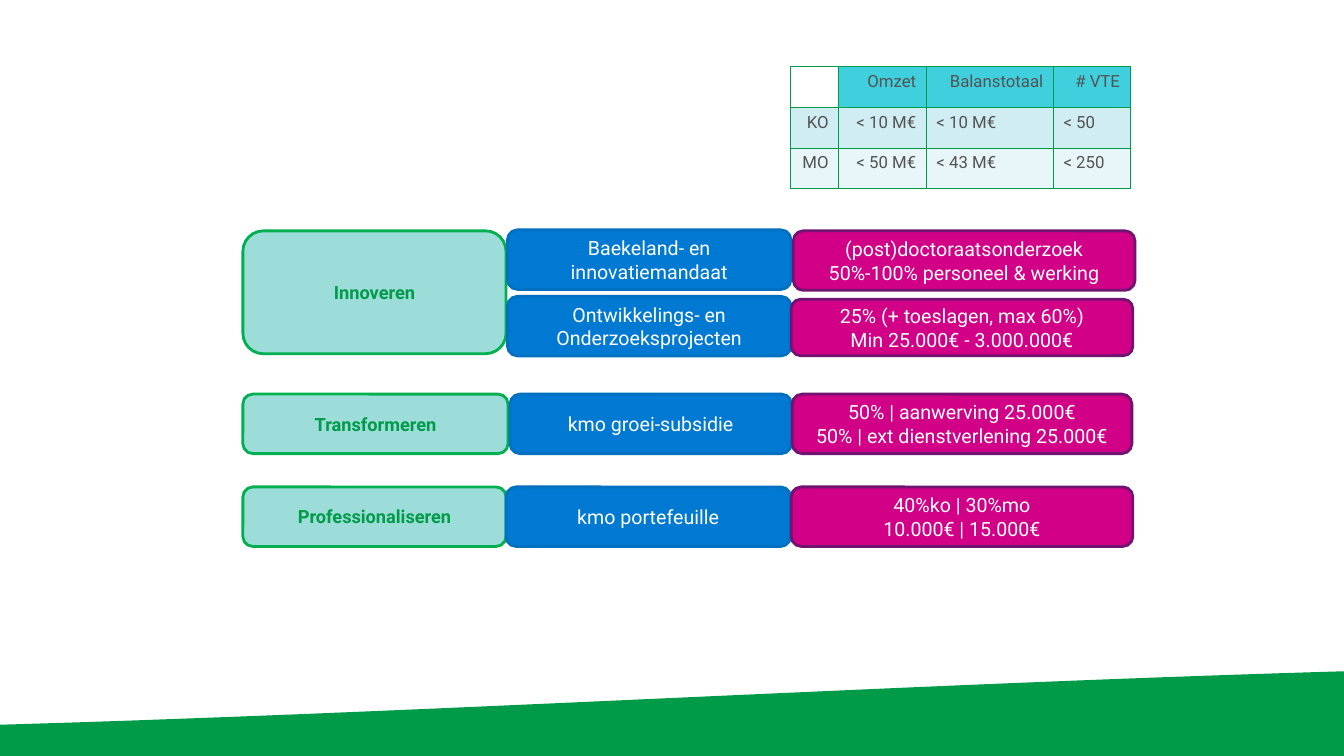
from lxml.etree import SubElement
from pptx import Presentation
from pptx.dml.color import RGBColor
from pptx.enum.shapes import MSO_SHAPE
from pptx.enum.text import MSO_ANCHOR, PP_ALIGN
from pptx.oxml.ns import qn
from pptx.util import Pt

# Content: each box is left, top, width, height and its lines of text
BOX_GROUPS = [
    {"fill": "9CDCD9", "line": "00B050", "text": "009B48", "size": 13, "bold": True, "boxes": [
        (173.5, 164.9, 188, 87.8, ["Innoveren"]),
        (173.5, 281.5, 189.4, 42.5, ["Transformeren"]),
        (173.5, 347.8, 188, 42.5, ["Professionaliseren"]),
    ]},
    {"fill": "0079D3", "line": "0070C0", "text": "FFFFFF", "size": 14, "bold": False, "boxes": [
        (362.5, 164.2, 202.5, 42.5, ["Baekeland- en innovatiemandaat"]),
        (362.5, 211.7, 202.5, 42.5, ["Ontwikkelings- en Onderzoeksprojecten"]),
        (364.3, 281.5, 201, 42.5, ["kmo groei-subsidie"]),
        (361.5, 347.8, 203.2, 42.5, ["kmo portefeuille"]),
    ]},
    {"fill": "D10086", "line": "711371", "text": "FFFFFF", "size": 14, "bold": False, "boxes": [
        (566.7, 164.9, 244, 42.5, ["(post)doctoraatsonderzoek", "50%-100% personeel & werking"]),
        (565.2, 213.8, 244, 40.3, ["25% (+ toeslagen, max 60%)", "Min 25.000€ - 3.000.000€"]),
        (565.9, 281.5, 242.6, 42.5, ["50% | aanwerving 25.000€", "50% | ext dienstverlening 25.000€"]),
        (565.2, 347.8, 244, 42.5, ["40%ko | 30%mo", "10.000€ | 15.000€"]),
    ]},
]
SIZE_LIMITS = [
    ["", "Omzet", "Balanstotaal", "# VTE"],
    ["KO", "< 10 M€", "< 10 M€", "< 50"],
    ["MO", "< 50 M€", "< 43 M€", "< 250"],
]
ROW_FILLS = ["3FCFDD", "CFEDF2", "E8F6F9"]
COLUMN_WIDTHS = [34.6, 62.6, 90.8, 54.8]
ROW_HEIGHT = 29.1
GREEN = "009B48"
FONT = "Roboto"
# Top edge of the footer band: two cubic curves
FOOTER_CURVES = [
    [(0, 517.7), (321.8, 508.3), (638.6, 488.9), (960, 479.5)],
]


def color(hex_text):
    return RGBColor.from_string(hex_text)


def style_paragraph(para, size, hex_text, align, bold=False):
    para.alignment = align
    for span in para.runs:
        span.font.name = FONT
        span.font.size = Pt(size)
        span.font.bold = bold
        span.font.color.rgb = color(hex_text)


def curve_point(curve, t):
    weights = [(1 - t) ** 3, 3 * t * (1 - t) ** 2, 3 * t ** 2 * (1 - t), t ** 3]
    return tuple(Pt(sum(w * point[axis] for w, point in zip(weights, curve))) for axis in (0, 1))


def add_footer(page):
    steps = 40
    edge = [curve_point(curve, i / steps) for curve in FOOTER_CURVES for i in range(steps + 1)]
    builder = page.shapes.build_freeform(*edge[0], scale=1.0)
    builder.add_line_segments(edge[1:] + [(Pt(960), Pt(540)), (0, Pt(540))], close=True)
    band = builder.convert_to_shape()
    band.shadow.inherit = False
    band.fill.solid()
    band.fill.fore_color.rgb = color(GREEN)
    band.line.fill.background()


def add_box(page, group, left, top, width, height, lines):
    box = page.shapes.add_shape(MSO_SHAPE.ROUNDED_RECTANGLE, Pt(left), Pt(top), Pt(width), Pt(height))
    box.shadow.inherit = False
    box.fill.solid()
    box.fill.fore_color.rgb = color(group["fill"])
    box.line.color.rgb = color(group["line"])
    box.line.width = Pt(2)
    frame = box.text_frame
    frame.word_wrap = True
    frame.vertical_anchor = MSO_ANCHOR.MIDDLE
    frame.text = "\n".join(lines)
    for para in frame.paragraphs:
        style_paragraph(para, group["size"], group["text"], PP_ALIGN.CENTER, group["bold"])


def add_borders(cell):
    properties = cell._tc.get_or_add_tcPr()
    for side in ("a:lnL", "a:lnR", "a:lnT", "a:lnB"):
        border = SubElement(properties, qn(side), w=str(Pt(1)))
        SubElement(SubElement(border, qn("a:solidFill")), qn("a:srgbClr"), val=GREEN)


def add_limits_table(page):
    rows, columns = len(SIZE_LIMITS), len(COLUMN_WIDTHS)
    table = page.shapes.add_table(rows, columns, Pt(564.5), Pt(47.5),
                                  Pt(sum(COLUMN_WIDTHS)), Pt(rows * ROW_HEIGHT)).table
    for column, width in zip(table.columns, COLUMN_WIDTHS):
        column.width = Pt(width)
    for r, values in enumerate(SIZE_LIMITS):
        table.rows[r].height = Pt(ROW_HEIGHT)
        for c, value in enumerate(values):
            cell = table.cell(r, c)
            add_borders(cell)
            cell.fill.solid()
            cell.fill.fore_color.rgb = color(ROW_FILLS[r] if value else "FFFFFF")
            cell.text_frame.text = value
            align = PP_ALIGN.RIGHT if r == 0 or c < 2 else PP_ALIGN.LEFT
            style_paragraph(cell.text_frame.paragraphs[0], 12, "535353", align)


def main():
    deck = Presentation()
    deck.slide_width, deck.slide_height = Pt(960), Pt(540)
    page = deck.slides.add_slide(deck.slide_layouts[6])
    add_footer(page)
    for group in BOX_GROUPS:
        for box in group["boxes"]:
            add_box(page, group, *box)
    add_limits_table(page)
    deck.save("out.pptx")


if __name__ == "__main__":
    main()
